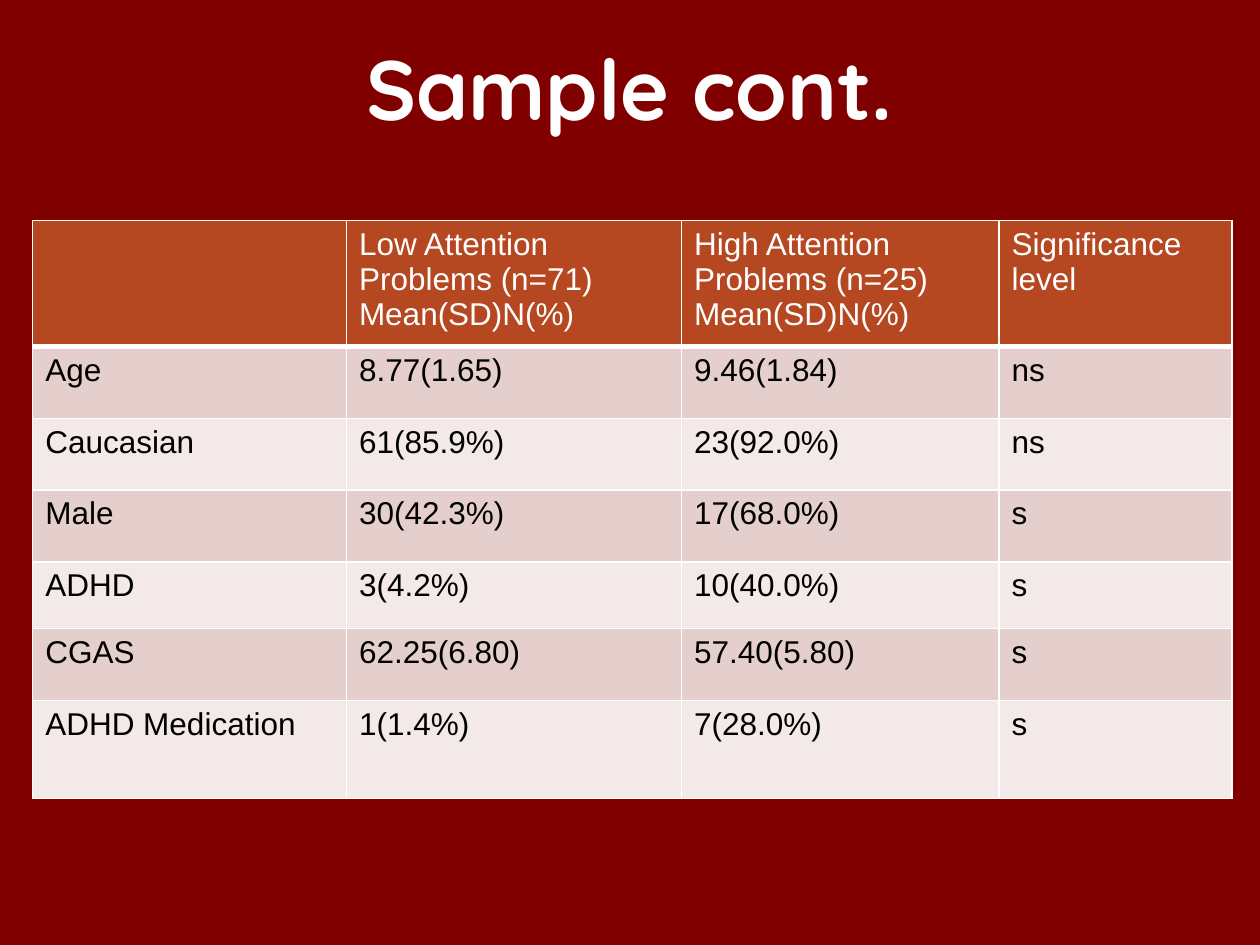
from pptx import Presentation
from pptx.dml.color import RGBColor
from pptx.enum.text import MSO_ANCHOR, PP_ALIGN
from pptx.oxml.ns import qn
from pptx.util import Inches, Pt
from lxml.etree import SubElement

WHITE, BLACK = "FFFFFF", "000000"
HEAD, BANDS = "B54721", ("F3E9E8", "E5CFCD")
COLS = [2.49, 2.66, 2.52, 1.85]
ROWS = [0.68, 0.57, 0.57, 0.57, 0.53, 0.57, 0.78]
DATA = [
    ["", "Low Attention Problems (n=71)\nMean(SD)N(%)",
     "High Attention Problems (n=25)\nMean(SD)N(%)", "Significance level"],
    ["Age", "8.77(1.65)", "9.46(1.84)", "ns"],
    ["Caucasian", "61(85.9%)", "23(92.0%)", "ns"],
    ["Male", "30(42.3%)", "17(68.0%)", "s"],
    ["ADHD", "3(4.2%)", "10(40.0%)", "s"],
    ["CGAS", "62.25(6.80)", "57.40(5.80)", "s"],
    ["ADHD Medication", "1(1.4%)", "7(28.0%)", "s"],
]


def color(code):
    return RGBColor.from_string(code)


def write(frame, text, size=18, font="Arial", ink=BLACK, bold=False,
          align=PP_ALIGN.LEFT, space=None):
    frame.word_wrap = True
    frame.text = text
    for para in frame.paragraphs:
        para.alignment = align
        para.line_spacing = space
        para.font.size = Pt(size)
        para.font.name = font
        para.font.bold = bold
        para.font.color.rgb = color(ink)


def border(cell, side, width):
    props = cell._tc.get_or_add_tcPr()
    line = SubElement(props, qn(f"a:ln{side}"), w=str(Pt(width)))
    fill = SubElement(line, qn("a:solidFill"))
    SubElement(fill, qn("a:srgbClr"), val=WHITE)


def add_title(slide, text):
    box = slide.shapes.add_textbox(Inches(0.85), Inches(0.1),
                                   Inches(8.29), Inches(1.25))
    box.text_frame.vertical_anchor = MSO_ANCHOR.MIDDLE
    write(box.text_frame, text, size=48, font="Quicksand", ink=WHITE,
          bold=True, align=PP_ALIGN.CENTER, space=0.95)


def add_grid(slide):
    table = slide.shapes.add_table(
        len(ROWS), len(COLS), Inches(0.26), Inches(1.75),
        Inches(sum(COLS)), Inches(sum(ROWS))).table
    for col, width in zip(table.columns, COLS):
        col.width = Inches(width)
    for i, (row, height) in enumerate(zip(table.rows, ROWS)):
        row.height = Inches(height)
        for cell, text in zip(row.cells, DATA[i]):
            write(cell.text_frame, text, ink=BLACK if i else WHITE)
            # A thick rule parts the header from the body
            for side in "LRTB":
                thick = (i, side) in ((0, "B"), (1, "T"))
                border(cell, side, 3 if thick else 1)
            cell.fill.solid()
            cell.fill.fore_color.rgb = color(BANDS[i % 2] if i else HEAD)


def main():
    deck = Presentation()
    deck.slide_width, deck.slide_height = Inches(10), Inches(7.5)
    slide = deck.slides.add_slide(deck.slide_layouts[6])

    # Background
    back = slide.background.fill
    back.solid()
    back.fore_color.rgb = color("800000")

    # Title and sample table
    add_title(slide, "Sample cont.")
    add_grid(slide)
    deck.save("out.pptx")


if __name__ == "__main__":
    main()
